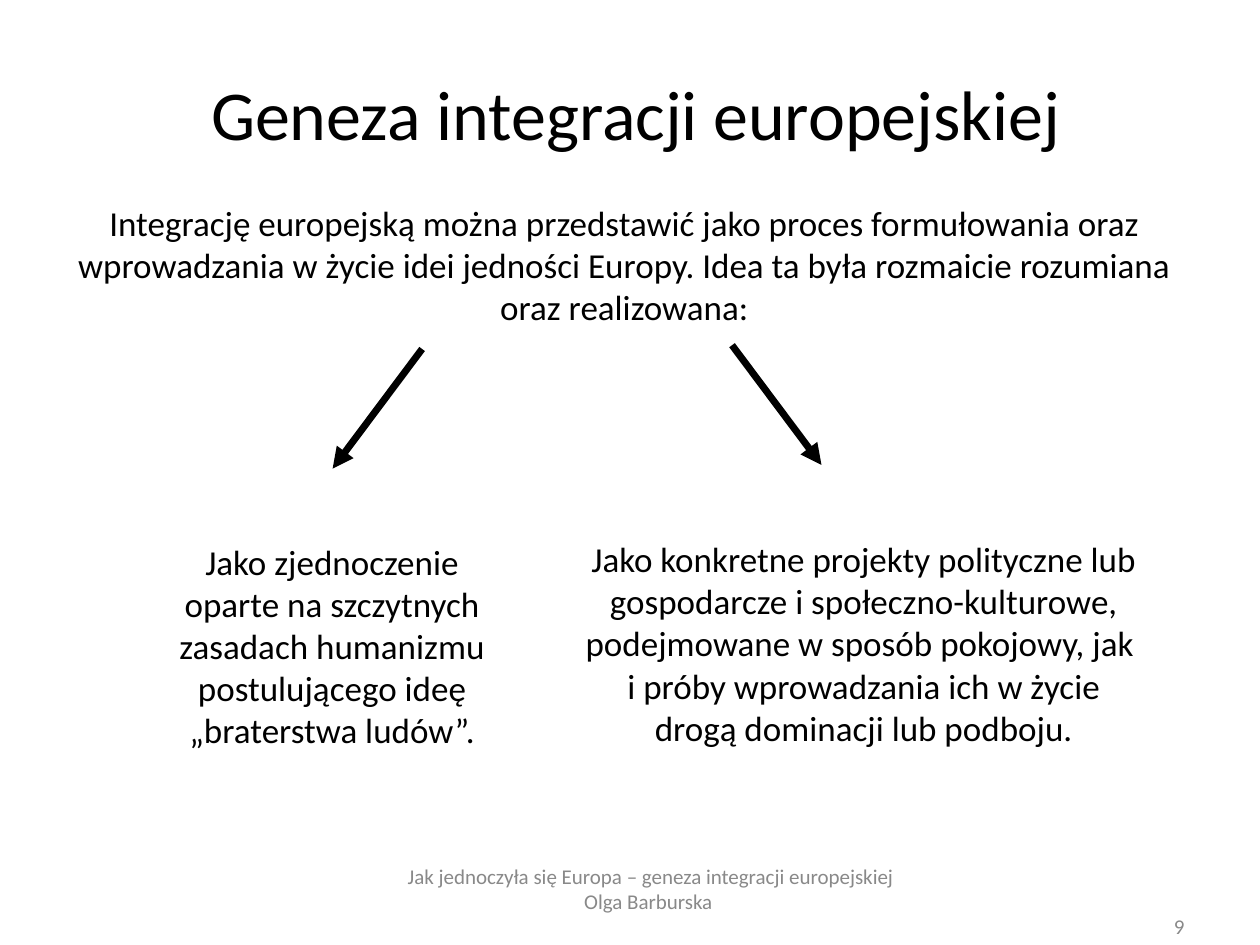
from dataclasses import dataclass

from lxml.etree import SubElement
from pptx import Presentation
from pptx.dml.color import RGBColor
from pptx.enum.shapes import MSO_CONNECTOR
from pptx.enum.text import MSO_ANCHOR, PP_ALIGN
from pptx.oxml.ns import qn
from pptx.util import Inches, Pt


@dataclass(frozen=True)
class Theme:
    font: str = "Calibri"
    ink: RGBColor = RGBColor(0, 0, 0)
    muted: RGBColor = RGBColor(0x89, 0x89, 0x89)
    title: Pt = Pt(40)
    body: Pt = Pt(20)
    footer: Pt = Pt(12)
    arrow: Pt = Pt(4)


THEME = Theme()


@dataclass(frozen=True)
class TextBlock:
    text: str
    left: float
    top: float
    width: float
    height: float
    size: Pt = THEME.body
    color: RGBColor = THEME.ink
    anchor: MSO_ANCHOR = MSO_ANCHOR.TOP


@dataclass(frozen=True)
class Arrow:
    start_x: float
    start_y: float
    run: float
    drop: float = 0.95


TITLE = TextBlock("Geneza integracji europejskiej", 0.24, 0.51, 9.61, 0.77, THEME.title)
INTRO = TextBlock(
    "Integrację europejską można przedstawić jako proces formułowania oraz "
    "wprowadzania w życie idei jedności Europy. Idea ta była rozmaicie "
    "rozumiana oraz realizowana:",
    0.35, 1.55, 9.21, 1.11,
)
IDEALS = TextBlock(
    "Jako zjednoczenie oparte na szczytnych zasadach humanizmu "
    "postulującego ideę „braterstwa ludów”.",
    1.14, 4.24, 2.99, 1.78,
)
# \v is a line break inside the paragraph
PROJECTS = TextBlock(
    "Jako konkretne projekty polityczne lub gospodarcze i społeczno-kulturowe, "
    "podejmowane w sposób pokojowy, jak \vi próby wprowadzania ich w życie "
    "drogą dominacji lub podboju.",
    4.53, 4.22, 4.65, 1.78,
)
FOOTER = TextBlock(
    "Jak jednoczyła się Europa – geneza integracji europejskiej\nOlga Barburska \n9",
    0.83, 6.95, 8.67, 0.4, THEME.footer, THEME.muted, MSO_ANCHOR.MIDDLE,
)
ARROWS = (Arrow(3.35, 2.77, -0.71), Arrow(5.81, 2.74, 0.71))


def add_text(slide, block: TextBlock):
    box = slide.shapes.add_textbox(
        Inches(block.left), Inches(block.top), Inches(block.width), Inches(block.height)
    )
    frame = box.text_frame
    frame.word_wrap = True
    frame.vertical_anchor = block.anchor
    frame.text = block.text
    for paragraph in frame.paragraphs:
        paragraph.alignment = PP_ALIGN.CENTER
        for run in paragraph.runs:
            run.font.name = THEME.font
            run.font.size = block.size
            run.font.color.rgb = block.color
    return frame


def add_arrow(slide, arrow: Arrow) -> None:
    connector = slide.shapes.add_connector(
        MSO_CONNECTOR.STRAIGHT,
        Inches(arrow.start_x), Inches(arrow.start_y),
        Inches(arrow.start_x + arrow.run), Inches(arrow.start_y + arrow.drop),
    )
    connector.line.color.rgb = THEME.ink
    connector.line.width = THEME.arrow
    # Arrowhead at the end, no shadow
    SubElement(connector.line._get_or_add_ln(), qn("a:tailEnd"), type="triangle")
    SubElement(connector._element.spPr, qn("a:effectLst"))


def main() -> None:
    presentation = Presentation()
    presentation.slide_width = Inches(10)
    presentation.slide_height = Inches(7.5)
    slide = presentation.slides.add_slide(presentation.slide_layouts[6])

    # Footer with the page number on the right
    footer = add_text(slide, FOOTER)
    footer.paragraphs[-1].alignment = PP_ALIGN.RIGHT

    # Title, introduction and its two branches
    for block in (TITLE, INTRO, IDEALS, PROJECTS):
        add_text(slide, block)
    for arrow in ARROWS:
        add_arrow(slide, arrow)

    presentation.save("out.pptx")


if __name__ == "__main__":
    main()
